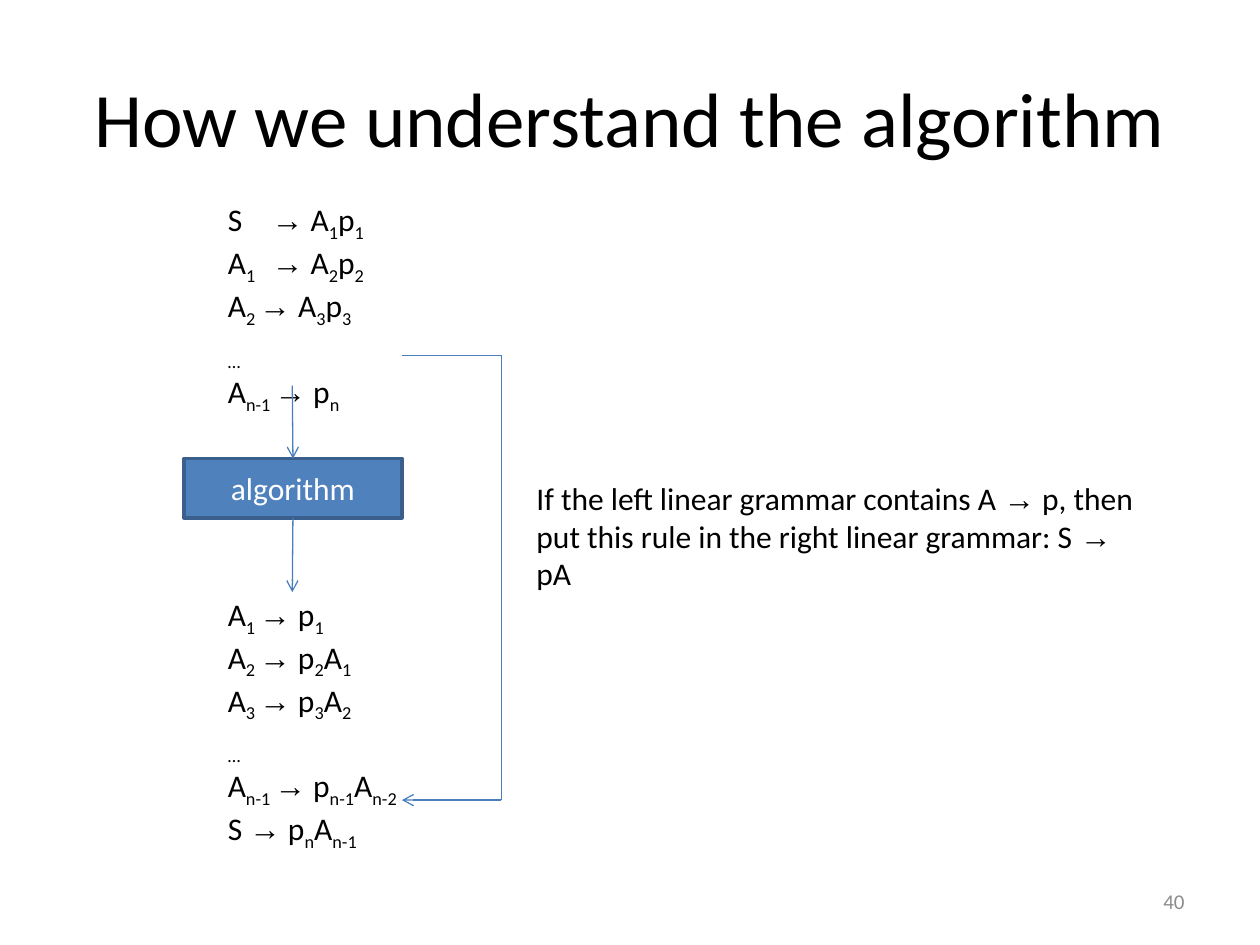
"""Build the slide on turning a left linear grammar into a right linear one."""
import pptx
import pptx.dml.color
import pptx.enum.shapes
import pptx.enum.text
import pptx.oxml
import pptx.oxml.ns
import pptx.util

Inches = pptx.util.Inches
Pt = pptx.util.Pt
ALIGN = pptx.enum.text.PP_ALIGN
ANCHOR = pptx.enum.text.MSO_ANCHOR
AUTO_SIZE = pptx.enum.text.MSO_AUTO_SIZE
COLORS = {
    "text": "000000",
    "box": "4F81BD",
    "box_edge": "3A5F8C",
    "box_text": "FFFFFF",
    "arrow": "4B7EBC",
    "number": "8C8C8C",
}
LEFT_RULES = [
    "S \t→ A_1_p_1_",
    "A_1\t_→ A_2_p_2_",
    "A_2 _→ A_3_p_3_",
    "_…_",
    "A_n-1 _→ p_n_",
]
RIGHT_RULES = [
    "A_1 _→ p_1_",
    "A_2 _→ p_2_A_1_",
    "A_3 _→ p_3_A_2_",
    "_…_",
    "A_n-1 _→ p_n-1_A_n-2_",
    "S → p_n_A_n-1_",
]
EXPLANATION = (
    "If the left linear grammar contains A → p, then put this rule "
    "in the right linear grammar: S → pA"
)


def color(name):
    return pptx.dml.color.RGBColor.from_string(COLORS[name])


def apply(target, values):
    for attribute, value in values.items():
        setattr(target, attribute, value)


def place(shape, left, top, width, height):
    apply(shape, {
        "left": Inches(left), "top": Inches(top),
        "width": Inches(width), "height": Inches(height),
    })


def add_run(paragraph, text, size, ink, font="Calibri", subscript=False):
    run = paragraph.add_run()
    run.text = text
    apply(run.font, {"size": Pt(size), "name": font})
    run.font.color.rgb = color(ink)
    if subscript:
        run.font._element.set("baseline", "-25000")


def write_line(paragraph, text, size=18, ink="text", align=ALIGN.LEFT):
    """Write one line in which underscores enclose subscripts."""
    paragraph.alignment = align
    for index, part in enumerate(text.split("_")):
        before, arrow, after = part.partition("→")
        while before or arrow:
            if before:
                add_run(paragraph, before, size, ink, subscript=index % 2 == 1)
            if arrow:
                add_run(paragraph, arrow, size, ink, font="Arial")
            before, arrow, after = after.partition("→")


def add_text(slide, area, lines, frame_format, **line_format):
    frame = slide.shapes.add_textbox(*map(Inches, area)).text_frame
    apply(frame, frame_format)
    for index, line in enumerate(lines):
        paragraph = frame.add_paragraph() if index else frame.paragraphs[0]
        write_line(paragraph, line, **line_format)
    return frame


def add_rules(slide, area, rules):
    frame = add_text(slide, area, rules,
                     {"word_wrap": False, "auto_size": AUTO_SIZE.SHAPE_TO_FIT_TEXT})
    for paragraph in frame.paragraphs:
        if "\t" in paragraph.text:
            tabs = pptx.oxml.parse_xml(
                f'<a:tabLst {pptx.oxml.ns.nsdecls("a")}>'
                f'<a:tab pos="{Inches(0.35)}" algn="l"/></a:tabLst>'
            )
            paragraph._p.get_or_add_pPr().append(tabs)


def add_line(slide, start, end, arrowhead=False):
    line = slide.shapes.add_connector(
        pptx.enum.shapes.MSO_CONNECTOR.STRAIGHT, *map(Inches, start + end))
    line.line.color.rgb = color("arrow")
    line.line.width = Pt(0.75)
    namespace = pptx.oxml.ns.nsdecls("a")
    if arrowhead:
        line.line._get_or_add_ln().append(
            pptx.oxml.parse_xml(f'<a:tailEnd {namespace} type="arrow"/>'))
    line._element.spPr.append(pptx.oxml.parse_xml(f"<a:effectLst {namespace}/>"))
    return line


def add_algorithm(slide):
    algorithm = slide.shapes.add_shape(
        pptx.enum.shapes.MSO_SHAPE.RECTANGLE, *map(Inches, (1.46, 3.64, 1.73, 0.47)))
    algorithm.shadow.inherit = False
    algorithm.fill.solid()
    algorithm.fill.fore_color.rgb = color("box")
    algorithm.line.color.rgb = color("box_edge")
    algorithm.line.width = Pt(2)
    algorithm.text_frame.vertical_anchor = ANCHOR.MIDDLE
    write_line(algorithm.text_frame.paragraphs[0], "algorithm",
               ink="box_text", align=ALIGN.CENTER)
    return algorithm


def main():
    deck = pptx.Presentation()
    apply(deck, {"slide_width": Inches(10), "slide_height": Inches(7.5)})
    slide = deck.slides.add_slide(deck.slide_layouts[5])

    heading = slide.shapes.title
    place(heading, 0.5, 0.3, 9, 1.25)
    heading.text_frame.vertical_anchor = ANCHOR.MIDDLE
    write_line(heading.text_frame.paragraphs[0],
               "How we understand the algorithm", size=44, align=ALIGN.CENTER)

    add_rules(slide, (1.71, 1.54, 1.31, 1.51), LEFT_RULES)
    algorithm = add_algorithm(slide)
    add_line(slide, (2.32, 3.06), (2.32, 3.64), True).end_connect(algorithm, 0)
    add_line(slide, (2.32, 4.11), (2.32, 4.7), True).begin_connect(algorithm, 2)
    add_rules(slide, (1.71, 4.67, 1.67, 1.82), RIGHT_RULES)

    bracket = [(3.19, 2.82), (3.98, 2.82), (3.98, 6.35), (3.19, 6.35)]
    for start, end in zip(bracket, bracket[1:]):
        add_line(slide, start, end, arrowhead=end == bracket[-1])

    explanation = add_text(
        slide, (4.1, 3.75, 5, 1.01), [EXPLANATION],
        {"word_wrap": True, "auto_size": AUTO_SIZE.SHAPE_TO_FIT_TEXT})
    explanation.paragraphs[0]._p.get_or_add_pPr().set("marL", str(Inches(0.06)))
    add_text(slide, (7.17, 6.95, 2.33, 0.4), ["40"],
             {"word_wrap": True, "vertical_anchor": ANCHOR.MIDDLE},
             size=12, ink="number", align=ALIGN.RIGHT)
    deck.save("out.pptx")


if __name__ == "__main__":
    main()
